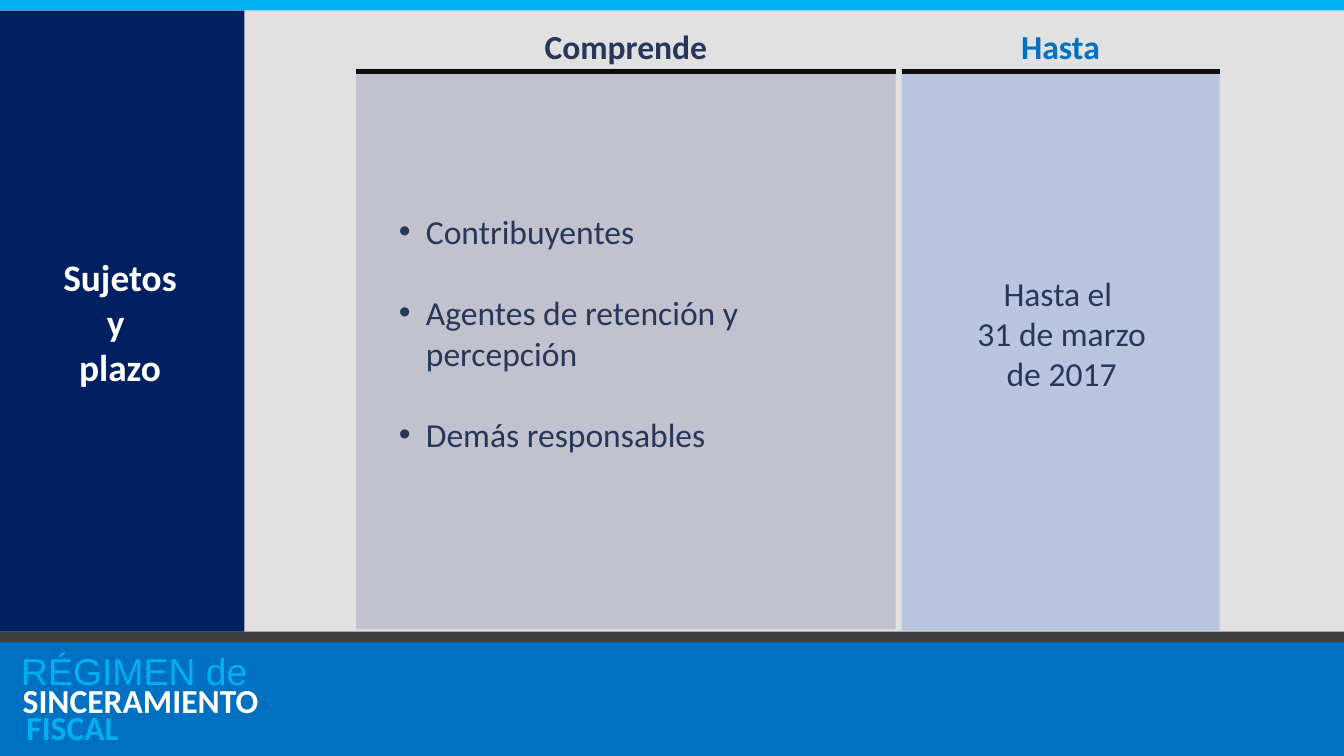
"""Build the slide on who is covered by the tax regime and until when."""
from lxml.etree import SubElement
from pptx import Presentation
from pptx.dml.color import RGBColor
from pptx.enum.shapes import MSO_CONNECTOR, MSO_SHAPE
from pptx.enum.text import MSO_ANCHOR, MSO_AUTO_SIZE, PP_ALIGN
from pptx.oxml.ns import qn
from pptx.util import Cm, Pt

WHITE = RGBColor(0xFF, 0xFF, 0xFF)
PAPER = RGBColor(0xE1, 0xE1, 0xE1)
BLUE = RGBColor(0x00, 0x70, 0xC0)
SKY = RGBColor(0x00, 0xB0, 0xF0)
NAVY = RGBColor(0x00, 0x20, 0x60)
GRAPHITE = RGBColor(0x40, 0x40, 0x40)
BLACK = RGBColor(0x0D, 0x0D, 0x0D)
INK = RGBColor(0x28, 0x36, 0x59)
MAUVE = RGBColor(0xC1, 0xC2, 0xCD)
PERIWINKLE = RGBColor(0xBA, 0xC5, 0xDF)

WIDTH, HEIGHT = 25.4, 14.29
BAR, FOOTER_TOP = 0.2, 12.14
STRIP_TOP = FOOTER_TOP - BAR
HEADER_TOP, HEADER_HEIGHT, RULE_TOP, COLUMN_HEIGHT = 0.36, 1.02, 1.35, 10.6

TITLE = ["Sujetos", "y ", "plazo"]
BANDS = [
    ((0, FOOTER_TOP, WIDTH, HEIGHT - FOOTER_TOP), BLUE),
    ((0, STRIP_TOP, WIDTH, BAR), GRAPHITE),
    ((0, 0, WIDTH, BAR), SKY),
    ((-0.08, BAR, 4.7, STRIP_TOP - BAR), NAVY),
]
FOOTER = [
    ("RÉGIMEN de", (0.15, 12.12, 11.3, 1.12),
     {"name": "Arial", "size": Pt(20), "color": SKY}),
    ("SINCERAMIENTO", (0.18, 12.73, 11.05, 1.02), {"bold": True, "color": WHITE}),
    ("FISCAL", (0.25, 13.23, 4.55, 1.02), {"bold": True, "color": SKY}),
]
COLUMNS = [
    {"header": "Comprende", "color": INK, "fill": MAUVE,
     "left": 6.73, "top": 1.3, "width": 10.2,
     "lines": ["Contribuyentes", "Agentes de retención y percepción",
               "Demás responsables"],
     "box": (7.29, 3.86, 8.53, 4.88), "bullets": True},
    {"header": "Hasta", "color": BLUE, "fill": PERIWINKLE,
     "left": 17.04, "top": 1.32, "width": 6.01,
     "lines": ["Hasta el ", "31 de marzo", "de 2017"],
     "box": (17.32, 5.03, 5.49, 2.57), "bullets": False},
]


def lengths(box):
    return [Cm(v) for v in box]


def add_band(s, box, color):
    sp = s.shapes.add_shape(MSO_SHAPE.RECTANGLE, *lengths(box))
    sp.shadow.inherit = False
    sp.fill.solid()
    sp.fill.fore_color.rgb = color
    sp.line.fill.background()


def add_rule(s, left, width):
    ends = lengths((left, RULE_TOP, left + width, RULE_TOP))
    line = s.shapes.add_connector(MSO_CONNECTOR.STRAIGHT, *ends)
    line.line.color.rgb = BLACK
    line.line.width = Pt(2.25)
    SubElement(line._element.spPr, qn("a:effectLst"))


def add_bullet(p):
    pPr = p._p.get_or_add_pPr()
    pPr.set("marL", str(Cm(0.51)))
    pPr.set("indent", str(-Cm(0.51)))
    SubElement(pPr, qn("a:buFont")).set("typeface", "Arial")
    SubElement(pPr, qn("a:buChar")).set("char", "•")


def write(tf, lines, formats, align=PP_ALIGN.CENTER, bullets=False):
    tf.word_wrap = True
    tf.auto_size = MSO_AUTO_SIZE.NONE
    font_values = {"name": "Calibri", "size": Pt(18), "bold": False} | formats
    color = font_values.pop("color")
    for i, line in enumerate(lines):
        p = tf.add_paragraph() if i else tf.paragraphs[0]
        p.alignment = align
        if bullets:
            add_bullet(p)
            if i:
                p.space_before = Pt(22)
        r = p.add_run()
        r.text = line
        for key, value in font_values.items():
            setattr(r.font, key, value)
        r.font.color.rgb = color


def add_text(s, box, *args, **options):
    write(s.shapes.add_textbox(*lengths(box)).text_frame, *args, **options)


def add_column(s, col):
    left, width = col["left"], col["width"]
    add_band(s, (left, col["top"], width, COLUMN_HEIGHT), col["fill"])
    add_text(s, (left, HEADER_TOP, width, HEADER_HEIGHT), [col["header"]],
             {"bold": True, "color": col["color"]})
    add_rule(s, left, width)
    align = PP_ALIGN.LEFT if col["bullets"] else PP_ALIGN.CENTER
    add_text(s, col["box"], col["lines"], {"color": INK},
             align=align, bullets=col["bullets"])


def place_title(s):
    title = s.shapes.title
    box = lengths((-0.08, 4.67, 4.7, 2.82))
    for key, value in zip(("left", "top", "width", "height"), box):
        setattr(title, key, value)
    title.text_frame.vertical_anchor = MSO_ANCHOR.MIDDLE
    write(title.text_frame, TITLE, {"size": Pt(20), "bold": True, "color": WHITE})
    s.shapes._spTree.append(title._element)


def main():
    prs = Presentation()
    prs.slide_width, prs.slide_height = Cm(WIDTH), Cm(HEIGHT)
    s = prs.slides.add_slide(prs.slide_layouts[5])
    s.background.fill.solid()
    s.background.fill.fore_color.rgb = PAPER
    for box, color in BANDS:
        add_band(s, box, color)
    for text, box, formats in FOOTER:
        add_text(s, box, [text], formats, align=PP_ALIGN.LEFT)
    place_title(s)
    for col in COLUMNS:
        add_column(s, col)
    prs.save("out.pptx")


if __name__ == "__main__":
    main()
